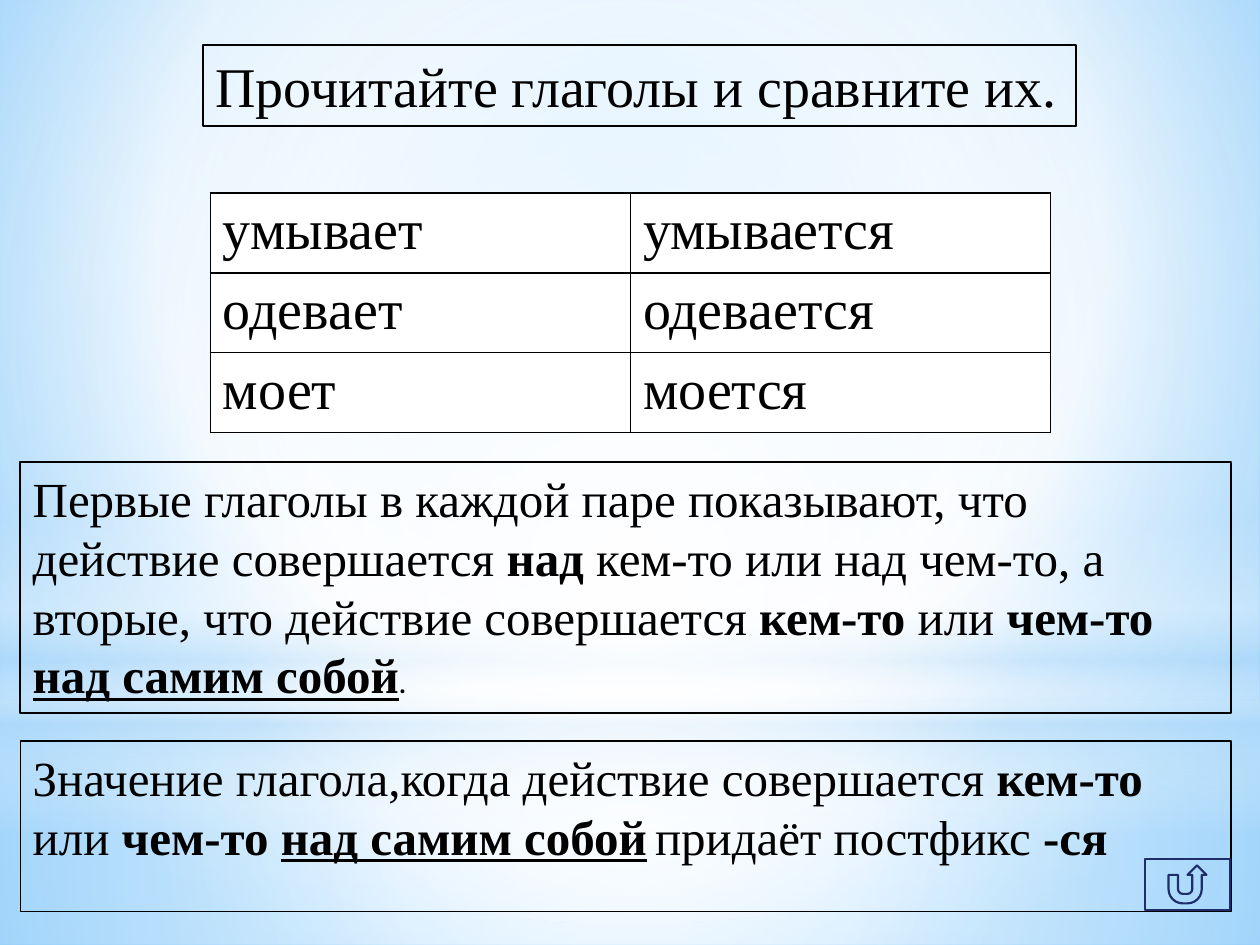
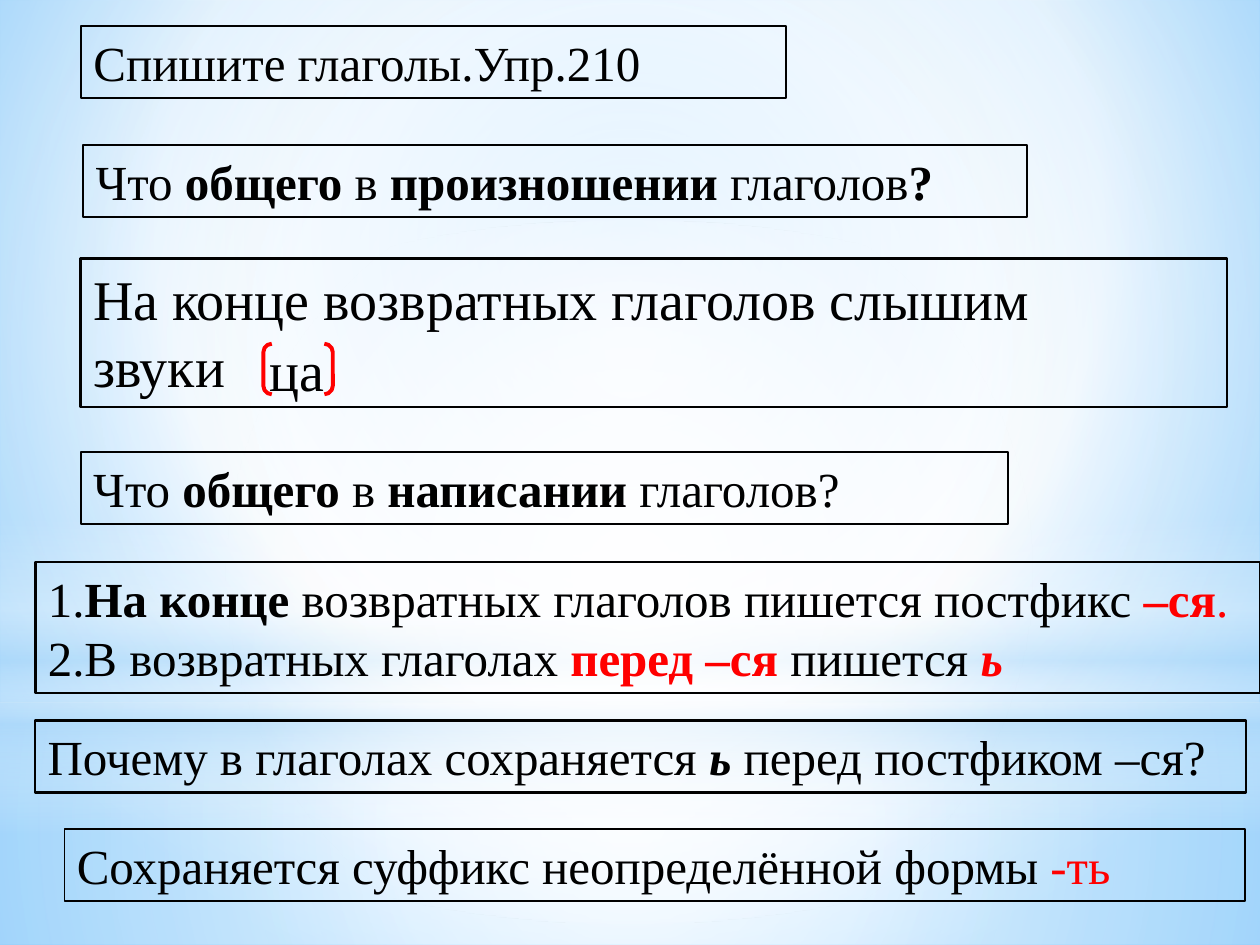
import pptx
import pptx.util
import pptx.oxml
import pptx.dml.color
import pptx.enum.shapes
import pptx.enum.text

Cm, Pt = pptx.util.Cm, pptx.util.Pt
KIND = pptx.enum.shapes.MSO_SHAPE
TEXT = pptx.enum.text
NS = 'xmlns:a="http://schemas.openxmlformats.org/drawingml/2006/main"'

# Shared look
FONT = "Times New Roman"
BLACK, WHITE, RED, NAVY, PALE = "000000", "FFFFFF", "FF0000", "1F2E69", "B4DCFA"
BOLD = {"bold": True}
UNDER = {"bold": True, "under": True}
SMALL = {"size": 18, "font": "Lato"}
LOUD = {"bold": True, "color": RED}
WIDE, HIGH = 25.4, 19.05


def rgb(code):
    return pptx.dml.color.RGBColor.from_string(code)


def place(shape, box):
    shape.left, shape.top, shape.width, shape.height = map(Cm, box)


def edge(shape, color=BLACK, width=1):
    shape.line.color.rgb = rgb(color)
    shape.line.width = Pt(width)


def write(para, text, size=28, font=FONT, color=BLACK, bold=False,
          slant=False, under=False):
    run = para.add_run()
    run.text = text
    face = run.font
    face.size, face.name = Pt(size), font
    face.bold, face.italic, face.underline = bold, slant, under
    face.color.rgb = rgb(color)


def fill_text(frame, lines, size=28, wrap=True):
    """Each line is a list of strings or (string, format) pairs."""
    frame.word_wrap = wrap
    frame.auto_size = TEXT.MSO_AUTO_SIZE.NONE
    frame.vertical_anchor = TEXT.MSO_ANCHOR.TOP
    for i, line in enumerate(lines):
        para = frame.add_paragraph() if i else frame.paragraphs[0]
        para.alignment = TEXT.PP_ALIGN.LEFT
        para.space_before = Pt(0)
        for part in line:
            text, style = (part, {}) if isinstance(part, str) else part
            write(para, text, **{"size": size, **style})


def panel(slide, box, lines, size=28, width=1, holder=None):
    """Outlined text panel, in a placeholder if one is given."""
    shape = holder or slide.shapes.add_textbox(0, 0, 0, 0)
    place(shape, box)
    edge(shape, width=width)
    fill_text(shape.text_frame, lines, size)
    return shape


# Background
def blend(fill, root, stops, focus=None):
    fill.gradient()
    old = root.xpath(".//a:gradFill")[0]
    marks = "".join(
        f'<a:gs pos="{pos * 1000}"><a:srgbClr val="{color}">'
        f'<a:alpha val="{alpha * 1000}"/></a:srgbClr></a:gs>'
        for pos, color, alpha in stops)
    if focus:
        sides = " ".join(f'{k}="{v * 1000}"' for k, v in zip("ltrb", focus))
        way = f'<a:path path="circle"><a:fillToRect {sides}/></a:path>'
    else:
        way = '<a:lin ang="5400000" scaled="0"/>'
    new = pptx.oxml.parse_xml(
        f'<a:gradFill {NS} rotWithShape="1"><a:gsLst>{marks}</a:gsLst>{way}</a:gradFill>')
    old.getparent().replace(old, new)


def backdrop(deck, slide):
    """Paint the master; bands are drawn on a slide and moved there."""
    master = deck.slide_master
    blend(master.background.fill, master.element,
          [(0, "9ED5FF", 100), (60, WHITE, 100), (100, "5BB9FF", 100)],
          (20, 10, 20, 60))
    mid = (50, 50, 50, 50)
    bands = [
        (KIND.RECTANGLE, 14.17, 4.88, mid,
         [(0, WHITE, 91), (37, WHITE, 76), (100, PALE, 79)]),
        (KIND.RECTANGLE, 0, 14.17, mid,
         [(0, WHITE, 89), (48, WHITE, 62), (100, PALE, 79)]),
        (KIND.RECTANGLE, 10.46, 6.35, None,
         [(0, WHITE, 0), (29, WHITE, 30), (45, PALE, 40),
          (55, WHITE, 26), (65, PALE, 60), (100, WHITE, 0)]),
        (KIND.OVAL, 4.45, 14.17, mid, [(0, WHITE, 100), (56, WHITE, 0)]),
    ]
    for i, (kind, top, high, focus, stops) in enumerate(bands):
        band = slide.shapes.add_shape(kind, 0, Cm(top), Cm(WIDE), Cm(high))
        band.shadow.inherit = False
        band.line.fill.background()
        blend(band.fill, band.element, stops, focus)
        band.element.xpath(".//p:cNvPr")[0].set("id", str(20 + i))
        master.shapes.element.insert(2 + i, band.element)


# Regions
def verbs(slide, box, rows):
    left, top, wide, high = map(Cm, box)
    table = slide.shapes.add_table(len(rows), 2, left, top, wide, high).table
    table.first_row = table.horz_banding = False
    for r, row in enumerate(rows):
        for c, word in enumerate(row):
            cell = table.cell(r, c)
            write(cell.text_frame.paragraphs[0], word, size=32)
            props = cell._tc.get_or_add_tcPr()
            for side in "LRTB":
                props.append(pptx.oxml.parse_xml(
                    f'<a:ln{side} {NS} w="12700"><a:solidFill>'
                    f'<a:srgbClr val="{BLACK}"/></a:solidFill></a:ln{side}>'))
            cell.fill.solid()
            cell.fill.fore_color.rgb = rgb(WHITE)


def button(slide, box):
    shape = slide.shapes.add_shape(KIND.ACTION_BUTTON_RETURN, 0, 0, 0, 0)
    place(shape, box)
    shape.shadow.inherit = False
    shape.fill.background()
    edge(shape, NAVY, 1.25)


def sounds(slide, box):
    """Answer panel with the bracketed sound on its second line."""
    left, top = box[:2]
    panel(slide, box, [["На конце возвратных глаголов слышим"], ["звуки"]],
          size=32, width=1.5)
    clasp = slide.shapes.add_shape(KIND.DOUBLE_BRACKET, 0, 0, 0, 0)
    place(clasp, (left + 3.68, top + 1.72, 1.4, 1.02))
    clasp.shadow.inherit = False
    clasp.fill.background()
    edge(clasp, RED, 2.25)
    note = slide.shapes.add_textbox(0, 0, 0, 0)
    place(note, (left + 3.55, top + 1.42, 1.63, 1.63))
    fill_text(note.text_frame, [["ца"]], size=32, wrap=False)


# Slides
def compare(slide):
    panel(slide, (4.09, 0.91, 17.6, 1.63), [["Прочитайте глаголы и сравните их."]],
          size=32, width=0.75, holder=slide.shapes.title)
    verbs(slide, (4.24, 3.89, 16.94, 4.83),
          [("умывает", "умывается"), ("одевает", "одевается"), ("моет", "моется")])
    left, wide = 0.41, 24.41
    actor = [("кем-то", BOLD), " или ", ("чем-то ", BOLD), ("над самим собой", UNDER)]
    panel(slide, (left, 9.32, wide, 5.05), [[
        "Первые глаголы в каждой паре показывают, что действие совершается ",
        ("над", BOLD), " кем-то или над чем-то, а вторые, что действие совершается ",
        *actor, (".", SMALL)]])
    panel(slide, (left, 14.94, wide, 3.43), [[
        "Значение глагола,когда действие совершается ",
        *actor, (" ", SMALL), "придаёт постфикс ", ("-ся", BOLD)]], width=0.75)
    button(slide, (23.09, 17.32, 1.7, 1.02))


def spell(slide):
    left, row = 1.63, 1.45
    panel(slide, (left, 0.53, 14.22, row), [["Спишите глаголы.Упр.210"]],
          holder=slide.shapes.title)
    panel(slide, (1.68, 2.92, 19.02, row), [[
        "Что", (" общего ", BOLD), "в", (" произношении ", BOLD),
        "глаголов", ("?", BOLD)]])
    sounds(slide, (left, 5.21, 23.11, 3))
    panel(slide, (left, 9.12, 18.69, row), [[
        "Что ", ("общего", BOLD), " в ", ("написании", BOLD), " глаголов?"]])
    rules = panel(slide, (0.71, 11.33, 24.69, 2.64), [
        ["1.", ("На конце ", BOLD), "возвратных глаголов пишется постфикс ",
         ("–ся", LOUD), (".", {"color": RED})],
        ["2.В возвратных глаголах ", ("перед –ся ", LOUD), "пишется ",
         ("ь", {**LOUD, "slant": True})],
    ], width=1.5, holder=slide.placeholders[1])
    for para in rules.text_frame.paragraphs:
        props = para._p.get_or_add_pPr()
        props.set("marL", "0")
        props.set("indent", "0")
        props.append(pptx.oxml.parse_xml(f"<a:buNone {NS}/>"))
    panel(slide, (0.71, 14.53, 24.41, row), [[
        "Почему в глаголах сохраняется ", ("ь", {"bold": True, "slant": True}),
        " перед постфиком –ся?"]], width=1.5)
    panel(slide, (1.3, 16.71, 23.8, row), [[
        "Сохраняется суффикс неопределённой формы ", ("-ть", {"color": RED})]])


def main():
    deck = pptx.Presentation()
    deck.slide_width, deck.slide_height = Cm(WIDE), Cm(HIGH)
    first = deck.slides.add_slide(deck.slide_layouts[5])
    backdrop(deck, first)
    compare(first)
    spell(deck.slides.add_slide(deck.slide_layouts[1]))
    deck.save("out.pptx")


if __name__ == "__main__":
    main()
